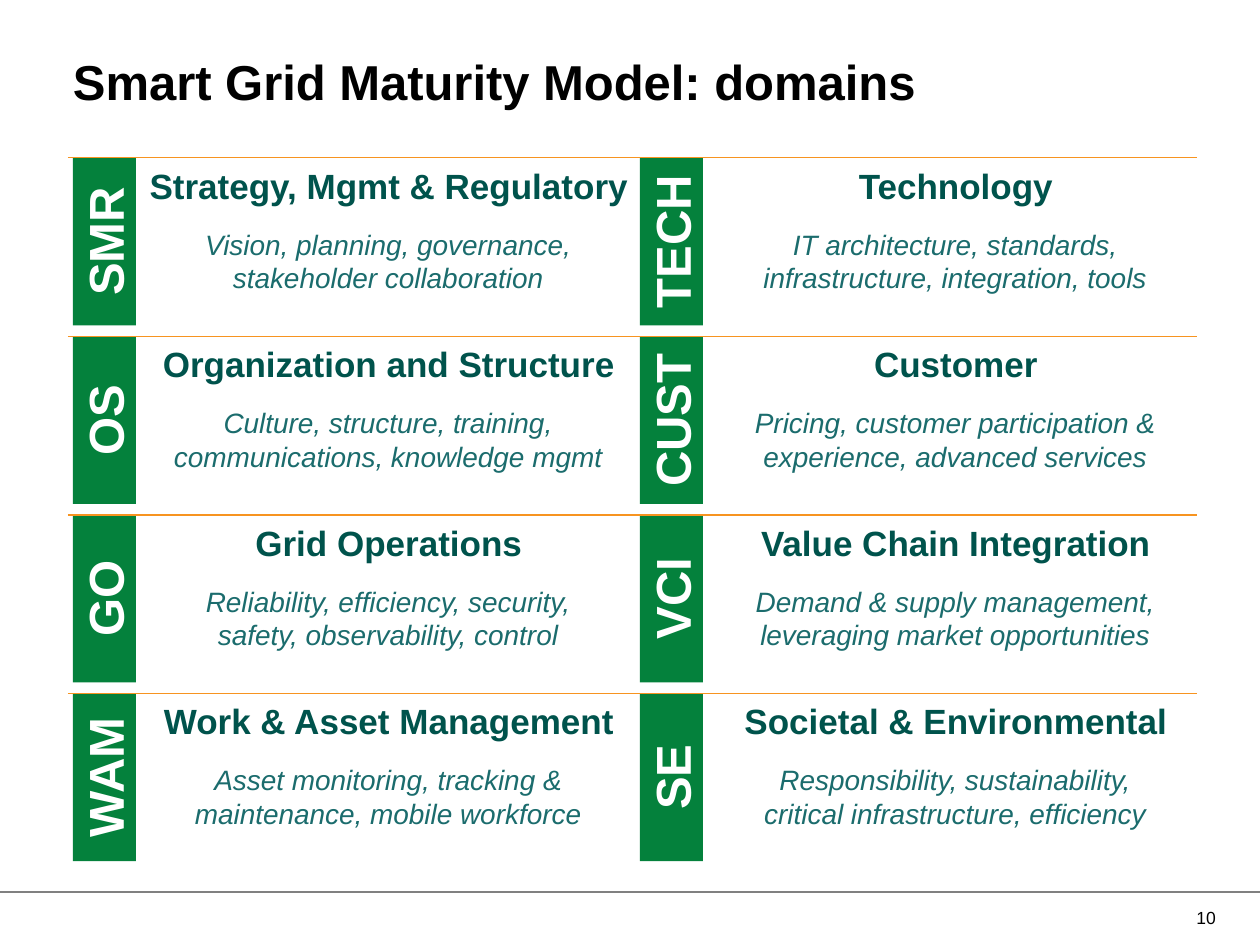
"""Build the slide listing the eight domains of the Smart Grid Maturity Model."""
from lxml import etree
from pptx import Presentation
from pptx.dml.color import RGBColor
from pptx.enum.shapes import MSO_CONNECTOR, MSO_SHAPE
from pptx.enum.text import MSO_ANCHOR, PP_ALIGN
from pptx.oxml.ns import qn
from pptx.util import Cm, Pt

LEFT, CENTER, RIGHT = PP_ALIGN.LEFT, PP_ALIGN.CENTER, PP_ALIGN.RIGHT
TOP, MIDDLE = MSO_ANCHOR.TOP, MSO_ANCHOR.MIDDLE
RECTANGLE, STRAIGHT = MSO_SHAPE.RECTANGLE, MSO_CONNECTOR.STRAIGHT

BLACK = RGBColor(0x00, 0x00, 0x00)
WHITE = RGBColor(0xFF, 0xFF, 0xFF)
GREEN = RGBColor(0x04, 0x81, 0x3C)
DARK_TEAL = RGBColor(0x00, 0x53, 0x4C)
TEAL = RGBColor(0x1B, 0x6C, 0x6D)
ORANGE = RGBColor(0xF7, 0x94, 0x20)
GRAY = RGBColor(0x80, 0x80, 0x80)

GRID_LEFT, GRID_TOP = 1.47, 3.18
COLUMN_PITCH, ROW_PITCH = 11.43, 3.6
TAB_WIDTH, PANEL_WIDTH, CARD_HEIGHT = 1.27, 9.95, 3.38

DOMAIN_COLUMNS = [
    [
        ("SMR", "Strategy, Mgmt & Regulatory",
         "Vision, planning, governance, stakeholder collaboration"),
        ("OS", "Organization and Structure",
         "Culture, structure, training, communications, knowledge mgmt"),
        ("GO", "Grid Operations",
         "Reliability, efficiency, security, safety, observability, control"),
        ("WAM", "Work & Asset Management",
         "Asset monitoring, tracking & maintenance, mobile workforce"),
    ],
    [
        ("TECH", "Technology",
         "IT architecture, standards, infrastructure, integration, tools"),
        ("CUST", "Customer",
         "Pricing, customer participation & experience, advanced services"),
        ("VCI", "Value Chain Integration",
         "Demand & supply management, leveraging market opportunities"),
        ("SE", "Societal & Environmental",
         "Responsibility, sustainability, critical infrastructure, efficiency"),
    ],
]


def write(shape, text, size, color, bold=False, italic=False, align=CENTER,
          anchor=TOP, insets=(0.25, 0.13, 0.25, 0.13), wrap=True, spacing=None):
    frame = shape.text_frame
    frame.word_wrap = wrap
    frame.vertical_anchor = anchor
    (frame.margin_left, frame.margin_top,
     frame.margin_right, frame.margin_bottom) = map(Cm, insets)
    paragraph = frame.paragraphs[0]
    paragraph.alignment = align
    paragraph.line_spacing = spacing
    run = paragraph.add_run()
    run.text = text
    font = run.font
    font.name, font.size, font.bold, font.italic = "Arial", Pt(size), bold, italic
    font.color.rgb = color


class DomainSlide:
    def __init__(self, presentation):
        self.slide = presentation.slides.add_slide(presentation.slide_layouts[5])
        self.shapes = self.slide.shapes

    def title(self, text):
        heading = self.shapes.title
        heading.left, heading.top = Cm(GRID_LEFT), Cm(1.17)
        heading.width, heading.height = Cm(22.66), Cm(1.09)
        write(heading, text, 28, BLACK, bold=True, align=LEFT,
              insets=(0, 0, 0, 0), spacing=0.9)

    def rule(self, left, right, y, color, weight):
        rule = self.shapes.add_connector(STRAIGHT, Cm(left), Cm(y), Cm(right), Cm(y))
        rule.line.color.rgb = color
        rule.line.width = Pt(weight)
        etree.SubElement(rule.element.spPr, qn("a:effectLst"))

    def block(self, shapes, left, top, width, fill):
        block = shapes.add_shape(RECTANGLE, Cm(left), Cm(top), Cm(width), Cm(CARD_HEIGHT))
        block.shadow.inherit = False
        block.fill.solid()
        block.fill.fore_color.rgb = fill
        block.line.fill.background()
        return block

    def label(self, shapes, left, top, width, height, text, **style):
        box = shapes.add_textbox(Cm(left), Cm(top), Cm(width), Cm(height))
        write(box, text, **style)

    def domain(self, left, top, code, name, focus):
        card = self.shapes.add_group_shape().shapes
        panel = self.block(card, left + TAB_WIDTH, top, PANEL_WIDTH, WHITE)
        write(panel, name, 20, DARK_TEAL, bold=True, insets=(0.25, 0.13, 0, 0.13))
        tab = self.block(card, left, top, TAB_WIDTH, GREEN)
        write(tab, code, 28, WHITE, bold=True, anchor=MIDDLE,
              insets=(0, 0, 0, 0), wrap=False)
        tab.element.txBody.bodyPr.set("vert", "vert270")
        self.label(card, left + 1.7, top + 1.27, 9.31, 1.91, focus,
                   size=16, color=TEAL, italic=True)


def main():
    presentation = Presentation()
    presentation.slide_width, presentation.slide_height = Cm(25.4), Cm(19.05)
    page = DomainSlide(presentation)
    page.rule(0, 25.4, 17.98, GRAY, 1)
    page.title("Smart Grid Maturity Model: domains")
    for column, domains in enumerate(DOMAIN_COLUMNS):
        for row, domain in enumerate(domains):
            page.domain(GRID_LEFT + column * COLUMN_PITCH,
                        GRID_TOP + row * ROW_PITCH, *domain)
    for row in range(len(DOMAIN_COLUMNS[0])):
        page.rule(1.37, 24.14, GRID_TOP + row * ROW_PITCH, ORANGE, 0.75)
    page.label(page.shapes, 21.79, 18.11, 2.97, 0.76, "10",
               size=10, color=BLACK, align=RIGHT, anchor=MIDDLE)
    presentation.save("out.pptx")


if __name__ == "__main__":
    main()
